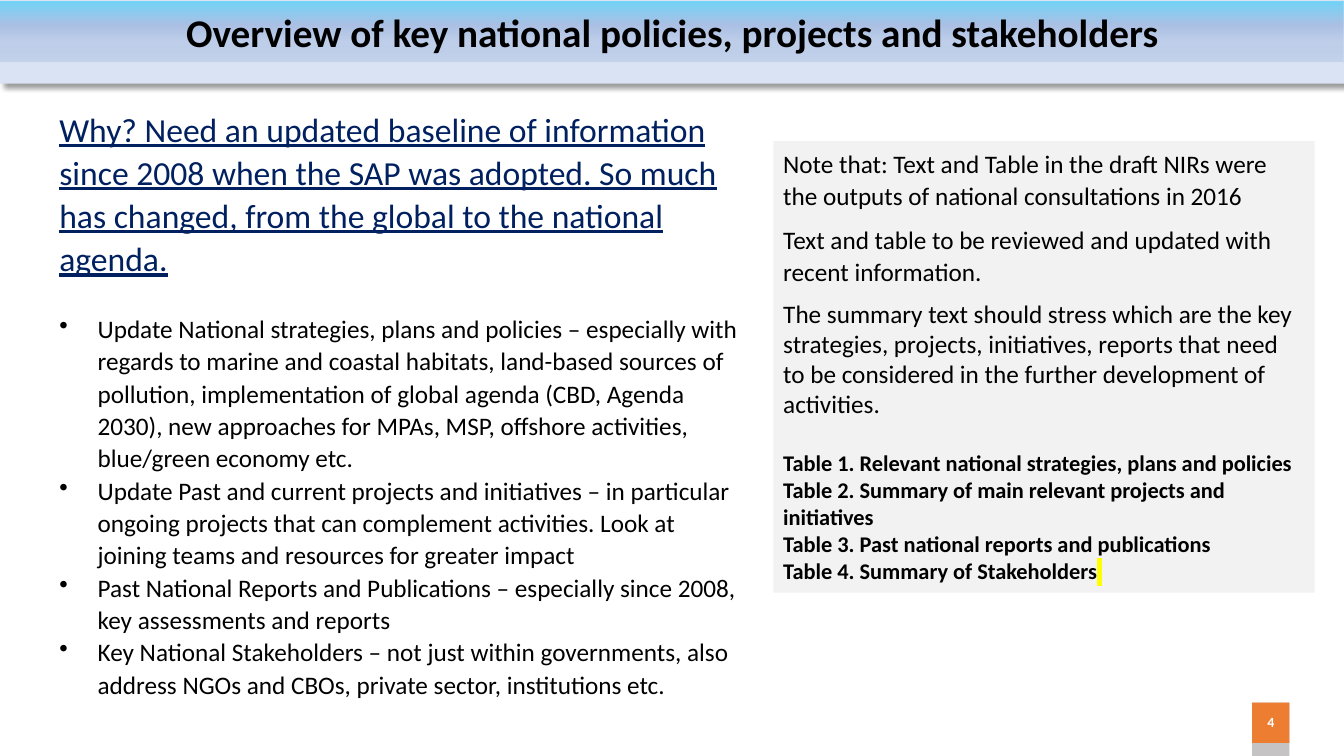
from lxml.etree import SubElement
from pptx import Presentation
from pptx.dml.color import RGBColor
from pptx.enum.shapes import MSO_SHAPE
from pptx.enum.text import MSO_ANCHOR, PP_ALIGN
from pptx.oxml import parse_xml
from pptx.oxml.ns import nsdecls, qn
from pptx.util import Inches, Pt

FONT = "Calibri"
BLACK = RGBColor(0x00, 0x00, 0x00)
WHITE = RGBColor(0xFF, 0xFF, 0xFF)
NAVY = RGBColor(0x00, 0x20, 0x60)
PALE_BLUE = RGBColor(0xDA, 0xE3, 0xF3)
PALE_GREY = RGBColor(0xF2, 0xF2, 0xF2)
GREY = RGBColor(0xC5, 0xC3, 0xC3)
ORANGE = RGBColor(0xED, 0x7D, 0x31)

HEADER_STOPS = [(0, "72D3F7", 100), (38, "ABC0E4", 100), (66, "ABC0E4", 56), (100, "C7D5ED", 100)]
TITLE = "Overview of key national policies, projects and stakeholders"
WHY = ("Why? Need an updated baseline of information since 2008 when the SAP was adopted. "
       "So much has changed, from the global to the national agenda.")
UPDATES = [
    "Update National strategies, plans and policies – especially with regards to marine and coastal "
    "habitats, land-based sources of pollution, implementation of global agenda (CBD, Agenda 2030), "
    "new approaches for MPAs, MSP, offshore activities, blue/green economy etc.",
    "Update Past and current projects and initiatives – in particular ongoing projects that can "
    "complement activities. Look at joining teams and resources for greater impact",
    "Past National Reports and Publications – especially since 2008, key assessments and reports",
    "Key National Stakeholders – not just within governments, also address NGOs and CBOs, "
    "private sector, institutions etc.",
]
NOTES = [
    ("Note that: Text and Table in the draft NIRs were the outputs of national consultations in 2016", 1.07, 8),
    ("Text and table to be reviewed and updated with recent information.", 1.07, 8),
    ("The summary text should stress which are the key strategies, projects, initiatives, reports "
     "that need to be considered in the further development of activities.", 1, 22),
]
TABLES = [
    "Table 1. Relevant national strategies, plans and policies",
    "Table 2. Summary of main relevant projects and initiatives",
    "Table 3. Past national reports and publications",
    "Table 4. Summary of Stakeholders",
]


def add_block(slide, left, top, width, height, color):
    """Add a plain filled rectangle without line or shadow."""
    shape = slide.shapes.add_shape(
        MSO_SHAPE.RECTANGLE, Inches(left), Inches(top), Inches(width), Inches(height))
    shape.shadow.inherit = False
    shape.fill.solid()
    shape.fill.fore_color.rgb = color
    shape.line.fill.background()
    return shape


def write(frame, text, size, color=BLACK, bold=False, align=PP_ALIGN.LEFT, spacing=1, after=0):
    """Write the next paragraph of a text frame and return it."""
    first = frame.paragraphs[0]
    paragraph = first if not first.runs else frame.add_paragraph()
    paragraph.add_run().text = text
    paragraph.alignment = align
    paragraph.line_spacing = spacing
    paragraph.space_after = Pt(after)
    paragraph.font.name = FONT
    paragraph.font.size = Pt(size)
    paragraph.font.bold = bold
    paragraph.font.color.rgb = color
    return paragraph


def add_bullet(paragraph, indent):
    """Give a paragraph a round bullet with a hanging indent."""
    properties = paragraph._p.get_or_add_pPr()
    properties.set("marL", str(Inches(indent)))
    properties.set("indent", str(-Inches(indent)))
    properties.insert_element_before(
        parse_xml(f'<a:buChar {nsdecls("a")} char="•"/>'), "a:tabLst", "a:defRPr", "a:extLst")


def add_highlight(run, color):
    """Mark a run with a highlight colour."""
    highlight = SubElement(run._r.get_or_add_rPr(), qn("a:highlight"))
    SubElement(highlight, qn("a:srgbClr")).set("val", color)


def add_shadow(shape):
    """Cast a soft grey shadow below a shape."""
    effects = shape._element.spPr.find(qn("a:effectLst"))
    effects.append(parse_xml(
        f'<a:outerShdw {nsdecls("a")} blurRad="{Pt(4)}" dist="{Pt(3)}" dir="2700000">'
        '<a:srgbClr val="000000"><a:alpha val="40000"/></a:srgbClr></a:outerShdw>'))


def fill_gradient(shape, stops):
    """Fill a shape from top to bottom with (position, colour, opacity) stops."""
    stop_list = "".join(
        f'<a:gs pos="{position * 1000}"><a:srgbClr val="{color}">'
        f'<a:alpha val="{opacity * 1000}"/></a:srgbClr></a:gs>'
        for position, color, opacity in stops)
    properties = shape._element.spPr
    solid = properties.find(qn("a:solidFill"))
    properties.replace(solid, parse_xml(
        f'<a:gradFill {nsdecls("a")} rotWithShape="1"><a:gsLst>{stop_list}</a:gsLst>'
        '<a:lin ang="5400000" scaled="0"/></a:gradFill>'))


def add_header(slide, left, top, width, height):
    """Add the pale band with the gradient title bar on it."""
    band = add_block(slide, left, top, width, height, PALE_BLUE)
    add_shadow(band)
    bar = add_block(slide, left, top + 0.02, width, 0.6, PALE_BLUE)
    fill_gradient(bar, HEADER_STOPS)
    frame = bar.text_frame
    frame.word_wrap = True
    frame.vertical_anchor = MSO_ANCHOR.MIDDLE
    write(frame, TITLE, 28, bold=True, align=PP_ALIGN.CENTER)


def add_reasons(slide, left, top, width, height):
    """Add the underlined reason and the list of updates."""
    box = slide.shapes.add_textbox(Inches(left), Inches(top), Inches(width), Inches(height))
    frame = box.text_frame
    frame.word_wrap = True
    write(frame, WHY, 24, NAVY, spacing=1.07, after=23.5).font.underline = True
    for update in UPDATES:
        add_bullet(write(frame, update, 18, spacing=1.07), 0.38)


def add_notes(slide, left, top, width, height):
    """Add the grey panel with the notes and the list of tables."""
    frame = add_block(slide, left, top, width, height, PALE_GREY).text_frame
    frame.word_wrap = True
    frame.vertical_anchor = MSO_ANCHOR.TOP
    for text, spacing, after in NOTES:
        write(frame, text, 18, spacing=spacing, after=after)
    for table in TABLES:
        paragraph = write(frame, table, 16, bold=True)
    marker = paragraph.add_run()
    marker.text = " "
    add_highlight(marker, "FFFF00")


def add_page_number(slide, left, top, width, height):
    """Add the orange page number on its grey tab."""
    add_block(slide, left, top, width, height, GREY)
    frame = add_block(slide, left, top, width, 0.4, ORANGE).text_frame
    frame.margin_left = frame.margin_right = 0
    frame.vertical_anchor = MSO_ANCHOR.MIDDLE
    paragraph = write(frame, "4", 10, WHITE, bold=True, align=PP_ALIGN.CENTER, spacing=0.9)
    paragraph.space_before = Pt(10)


def main():
    """Build the slide and save it."""
    presentation = Presentation()
    presentation.slide_width = Inches(13.33)
    presentation.slide_height = Inches(7.5)
    slide = presentation.slides.add_slide(presentation.slide_layouts[6])
    add_header(slide, 0, 0, 13.33, 0.83)
    add_page_number(slide, 12.42, 6.97, 0.37, 0.53)
    add_reasons(slide, 0.49, 1, 6.95, 6.35)
    add_notes(slide, 7.67, 1.4, 5.37, 4.48)
    presentation.save("out.pptx")


if __name__ == "__main__":
    main()
